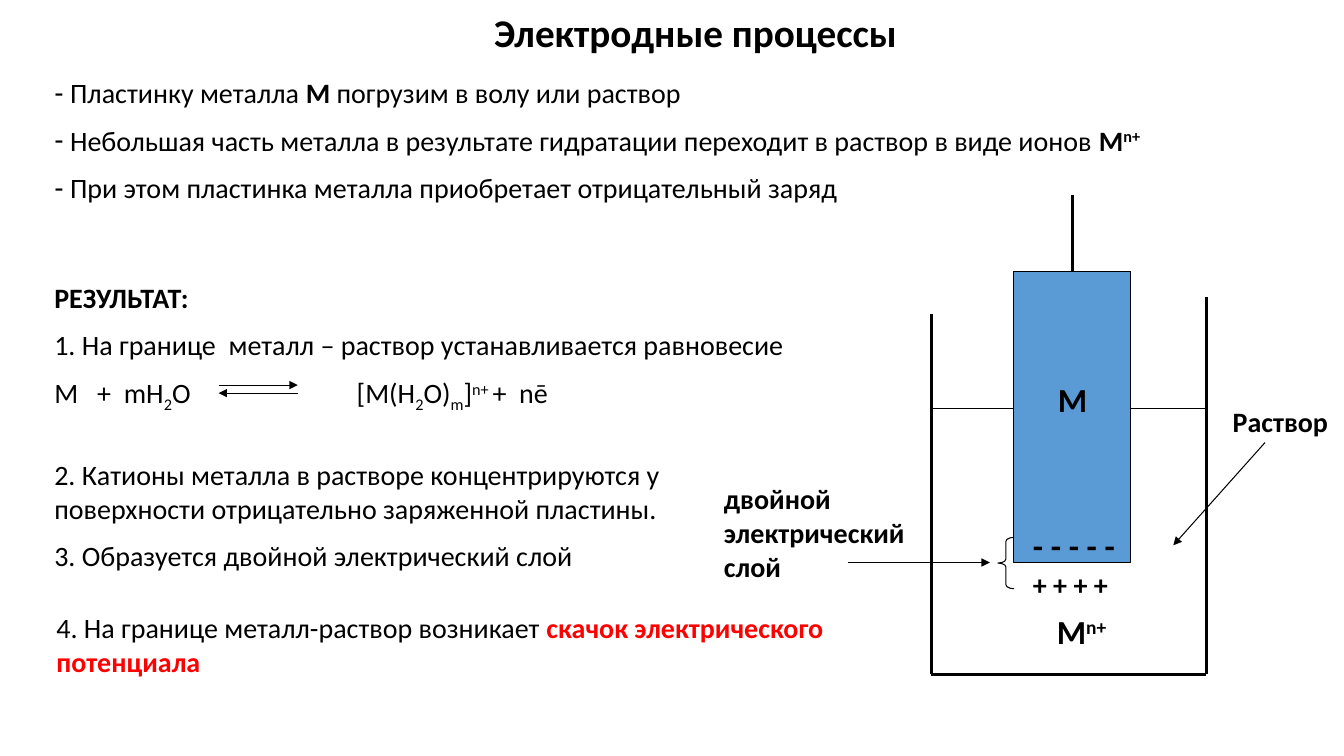
from lxml import etree
from pptx import Presentation
from pptx.dml.color import RGBColor
from pptx.enum import shapes, text
from pptx.oxml import ns
from pptx.util import Pt

BLACK = RGBColor(0x00, 0x00, 0x00)
RED = RGBColor(0xFF, 0x00, 0x00)
METAL_BLUE = RGBColor(0x5B, 0x9B, 0xD5)

CENTER = text.PP_ALIGN.CENTER
SUB, SUP = -25, 30
BOLD = {"bold": True}
ACCENT = {"bold": True, "color": RED}
FRAME_FORMAT = {
    "word_wrap": True,
    "auto_size": text.MSO_AUTO_SIZE.NONE,
    "margin_left": Pt(7.2),
    "margin_right": Pt(7.2),
    "margin_top": Pt(3.6),
    "margin_bottom": Pt(3.6),
}


def place(part, left, top, width, height):
    for side, points in zip(("left", "top", "width", "height"),
                            (left, top, width, height)):
        setattr(part, side, Pt(points))


def write(part, paragraphs, size=20, bold=False, align=None):
    """Fill a part with paragraphs, each a list of (words, format) runs."""
    frame = part.text_frame
    for name, value in FRAME_FORMAT.items():
        setattr(frame, name, value)
    for number, runs in enumerate(paragraphs):
        paragraph = frame.add_paragraph() if number else frame.paragraphs[0]
        paragraph.alignment = align
        paragraph.space_before = Pt(10 if number else 0)
        for words, changes in runs:
            look = {"color": BLACK, "bold": bold, "base": 0, **changes}
            run = paragraph.add_run()
            run.text = words
            font_format = {"name": "Calibri", "size": Pt(size), "bold": look["bold"]}
            for name, value in font_format.items():
                setattr(run.font, name, value)
            run.font.color.rgb = look["color"]
            if look["base"]:
                run.font._element.set("baseline", str(look["base"] * 1000))
    return frame.paragraphs


def add_text(slide, box, paragraphs, **style):
    part = slide.shapes.add_textbox(*map(Pt, box))
    return write(part, paragraphs, **style)


def add_line(slide, start, end, weight=0.75, arrow=False):
    line = slide.shapes.add_connector(
        shapes.MSO_CONNECTOR.STRAIGHT, *map(Pt, (*start, *end)))
    line.line.color.rgb = BLACK
    line.line.width = Pt(weight)
    if arrow:
        etree.SubElement(line.line._get_or_add_ln(), ns.qn("a:tailEnd"), type="triangle")
    etree.SubElement(line._element.spPr, ns.qn("a:effectLst"))


def add_outlined(slide, kind, box, fill=None):
    part = slide.shapes.add_shape(kind, *map(Pt, box))
    part.shadow.inherit = False
    part.line.color.rgb = BLACK
    part.line.width = Pt(0.75)
    if fill is None:
        part.fill.background()
    else:
        part.fill.solid()
        part.fill.fore_color.rgb = fill
    return part


def fill_heading(title, box):
    place(title, *box)
    write(title, [[("Электродные процессы", {})]], size=28, bold=True, align=CENTER)


def fill_steps(steps, box):
    place(steps, *box)
    paragraphs = write(steps, [
        [(" Пластинку металла ", {}), ("М", BOLD),
         (" погрузим в волу или раствор", {})],
        [(" Небольшая часть металла в результате гидратации переходит "
          "в раствор в виде ионов ", {}),
         ("М", BOLD), ("n+", {"bold": True, "base": SUP})],
        [(" При этом пластинка металла приобретает отрицательный заряд", {})],
    ])
    for paragraph in paragraphs:
        properties = paragraph._p.get_or_add_pPr()
        for name in ("marL", "indent"):
            properties.set(name, "0")
        etree.SubElement(properties, ns.qn("a:buChar"), char="-")


def add_results(slide, left, top):
    paragraphs = add_text(slide, (left, top, 567, 104), [
        [("РЕЗУЛЬТАТ:", BOLD)],
        [("1. На границе  металл – раствор устанавливается равновесие", {})],
        [("M   +  mH", {}), ("2", {"base": SUB}), ("O\t[M(H", {}),
         ("2", {"base": SUB}), ("O)", {}), ("m", {"base": SUB}), ("]", {}),
         ("n+ ", {"base": SUP}), ("+  nē", {})],
    ])
    tabs = etree.SubElement(paragraphs[-1]._p.get_or_add_pPr(), ns.qn("a:tabLst"))
    etree.SubElement(tabs, ns.qn("a:tab"), pos=str(Pt(216)), algn="l")

    reagents, products = left + 124.5, left + 181
    forward, backward = top + 78.5, top + 84.2
    add_line(slide, (reagents, forward), (products, forward), arrow=True)
    add_line(slide, (products, backward), (reagents, backward), arrow=True)

    add_text(slide, (left, top + 126.7, 470, 92), [
        [("2. Катионы металла в растворе концентрируются у поверхности "
          "отрицательно заряженной пластины.", {})],
        [("3. Образуется двойной электрический слой", {})],
    ])
    add_text(slide, (left + 1.5, top + 236.2, 596, 55.5), [
        [("4. На границе металл-раствор возникает ", {}),
         ("скачок электрического потенциала", ACCENT)],
    ])


def add_electrode(slide, left, top):
    """Draw the metal plate in its beaker, with the labels around it."""
    wall_left, wall_right, bottom = left + 155.3, left + 351.8, top + 342.7
    plate_left, plate_top, plate_width, plate_height = left + 214.3, top + 54.7, 83.5, 208.1
    plate_right, plate_bottom = plate_left + plate_width, plate_top + plate_height
    plate_middle = plate_left + plate_width / 2
    level = top + 152.6

    add_line(slide, (plate_middle, plate_top), (plate_middle, top), 2.5)
    beaker = [(wall_left, top + 85.6), (wall_left, bottom),
              (wall_right, bottom), (wall_right, top + 73.4)]
    for start, end in zip(beaker, beaker[1:]):
        add_line(slide, start, end, 2.25)
    add_outlined(slide, shapes.MSO_SHAPE.RECTANGLE,
                 (plate_left, plate_top, plate_width, plate_height), METAL_BLUE)
    for start, end in ((wall_left, plate_left), (plate_right, wall_right)):
        add_line(slide, (start, level), (end, level))

    add_text(slide, (plate_middle - 23.8, top + 128.1, 47.6, 36.7),
             [[("M", {})]], size=24, bold=True, align=CENTER)
    charges_left = plate_left + 6.5
    add_text(slide, (charges_left, top + 293.7, plate_width, 36.7),
             [[("M", {}), ("n+", {"base": SUP})]], size=24, bold=True, align=CENTER)
    add_text(slide, (charges_left, top + 232.5, 77, 36.7),
             [[("- - - - -", {})]], size=24, bold=True)
    add_text(slide, (charges_left, plate_bottom, 77, 31.7),
             [[("+ + + +", {})]], bold=True)

    add_line(slide, (left + 393.6, top + 177.1), (left + 328.1, top + 250.5), arrow=True)
    add_text(slide, (left + 363.4, top + 146.1, 86.5, 31.7),
             [[("Раствор", {})]], bold=True)

    brace = add_outlined(slide, shapes.MSO_SHAPE.LEFT_BRACE,
                         (plate_left - 11.5, plate_bottom - 18, 11.5, 36.7))
    brace.adjustments[0] = 0.25
    add_line(slide, (left + 95.5, plate_bottom), (left + 197, plate_bottom), arrow=True)
    add_text(slide, (left, top + 201.6, 167, 80),
             [[("двойной электрический слой", {})]], bold=True)


def main():
    deck = Presentation()
    deck.slide_width, deck.slide_height = Pt(960), Pt(540)
    slide = deck.slides.add_slide(deck.slide_layouts[1])
    title, steps = slide.placeholders
    fill_heading(title, (83.5, 2.2, 826.5, 41))
    fill_steps(steps, (31.7, 50.4, 922, 104.4))
    add_electrode(slide, 510, 139)
    add_results(slide, 31.7, 196.6)
    deck.save("out.pptx")


if __name__ == "__main__":
    main()
